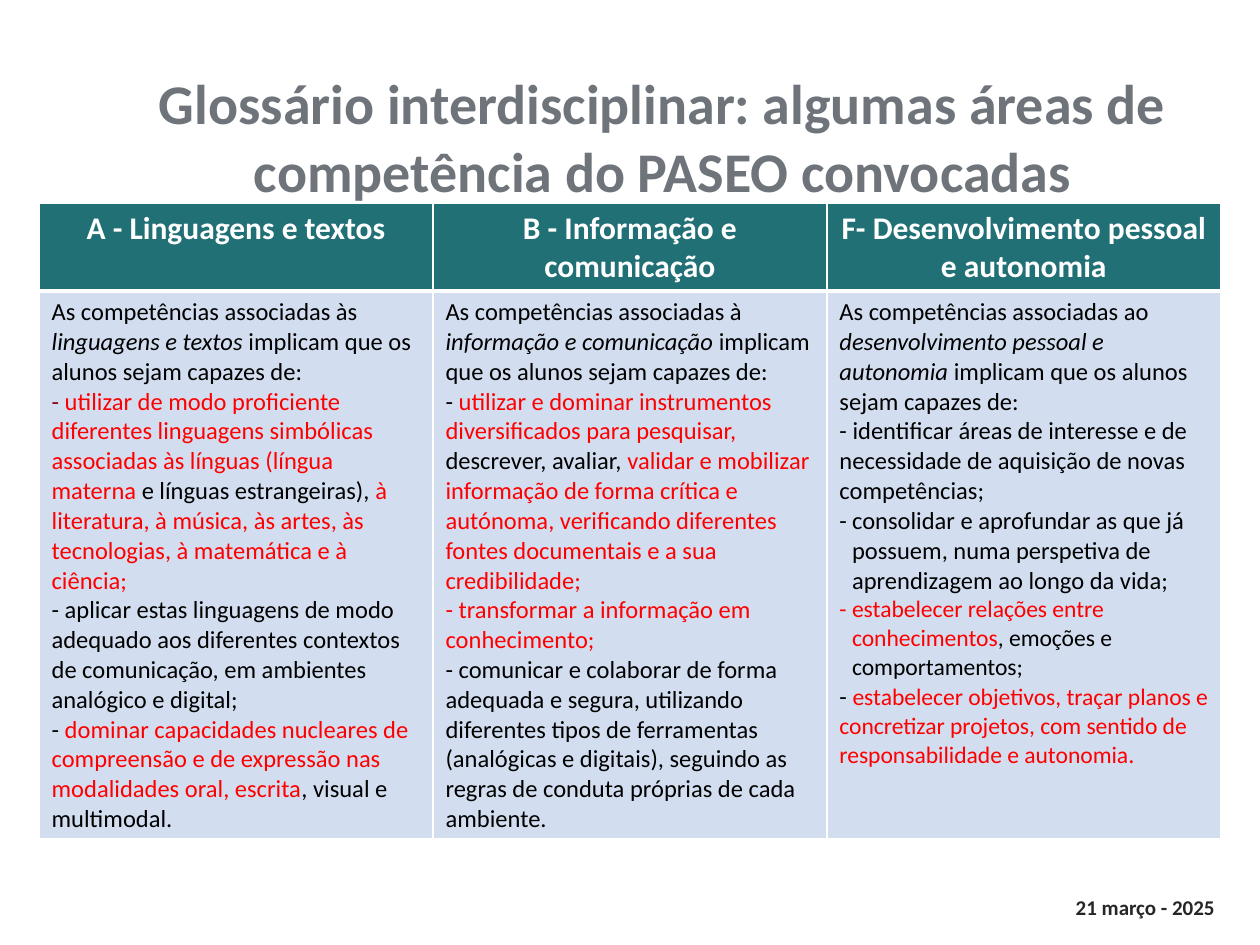
"""Build the slide with the interdisciplinary glossary of competence areas."""
from lxml import etree
from pptx import Presentation
from pptx import util as u
from pptx.dml.color import RGBColor
from pptx.enum import text
from pptx.oxml import ns

COLORS = {
    "title": "6E747A", "date": "262626", "header": "217076", "body": "D2DEEF",
    "white": "FFFFFF", "black": "000000", "red": "FF0000", "wine": "880016",
}
FONT = "Calibri"
BODY_SIZE = 14
SMALL_SIZE = 13.5
CENTER = text.PP_ALIGN.CENTER


def plain(words, size=BODY_SIZE):
    """Describe a black run."""
    return {"words": words, "color": "black", "size": size}


def red(words, size=BODY_SIZE):
    """Describe a highlighted run."""
    return {"words": words, "color": "red", "size": size}


def intro(article, area):
    """Describe the opening paragraph of an area."""
    return [plain(f"As competências associadas {article} "),
            {**plain(f"{area} "), "italic": True},
            plain("implicam que os alunos sejam capazes de:")]


AREAS = [
    ("A - Linguagens e textos", [
        intro("às", "linguagens e textos"),
        [{**plain("- "), "color": "wine"},
         red("utilizar de modo proficiente diferentes linguagens simbólicas "
             "associadas às línguas (língua materna "),
         plain("e línguas estrangeiras), "),
         red("à literatura, à música, às artes, às tecnologias, à matemática e à ciência;")],
        [plain("- aplicar estas linguagens de modo adequado aos diferentes contextos "
               "de comunicação, em ambientes analógico e digital;")],
        [plain("- "),
         red("dominar capacidades nucleares de compreensão e de expressão nas "
             "modalidades oral, escrita"),
         plain(", visual e multimodal.")],
    ]),
    ("B - Informação e comunicação", [
        intro("à", "informação e comunicação"),
        [plain("- "),
         red("utilizar e dominar instrumentos diversificados para pesquisar, "),
         plain("descrever, avaliar, "),
         red("validar e mobilizar informação de forma crítica e autónoma, verificando "
             "diferentes fontes documentais e a sua credibilidade;")],
        [red("- transformar a informação em conhecimento;")],
        [plain("- comunicar e colaborar de forma adequada e segura, utilizando diferentes "
               "tipos de ferramentas (analógicas e digitais), seguindo as regras de conduta "
               "próprias de cada ambiente.")],
    ]),
    ("F- Desenvolvimento pessoal e autonomia", [
        intro("ao", "desenvolvimento pessoal e autonomia"),
        [plain("- identificar áreas de interesse e de necessidade de aquisição de novas "
               "competências;")],
        ["-", plain("consolidar e aprofundar as que já possuem, numa perspetiva de "
                    "aprendizagem ao longo da vida;")],
        ["-", red("estabelecer relações entre conhecimentos", SMALL_SIZE),
         plain(", emoções e comportamentos;", SMALL_SIZE)],
        [plain("- "),
         red("estabelecer objetivos, traçar planos e concretizar projetos, com sentido de "
             "responsabilidade e autonomia", SMALL_SIZE),
         red(".")],
    ]),
]


def add_run(paragraph, words, color, size, bold=False, italic=False):
    """Add one formatted run to a paragraph."""
    run = paragraph.add_run()
    run.text = words
    font = run.font
    font.name, font.size, font.bold, font.italic = FONT, u.Pt(size), bold, italic
    font.color.rgb = RGBColor.from_string(COLORS[color])


def add_bullet(paragraph, character):
    """Give a paragraph a hanging bullet."""
    properties = paragraph._p.get_or_add_pPr()
    properties.set("marL", str(u.Inches(0.1)))
    properties.set("indent", str(-u.Inches(0.1)))
    etree.SubElement(properties, ns.qn("a:buFont"), typeface=FONT)
    etree.SubElement(properties, ns.qn("a:buChar"), char=character)


def add_label(slide, place, words, color, size, alignment):
    """Add a bold single-paragraph text box, centred vertically."""
    frame = slide.shapes.add_textbox(*map(u.Inches, place)).text_frame
    frame.word_wrap = True
    frame.vertical_anchor = text.MSO_ANCHOR.MIDDLE
    paragraph = frame.paragraphs[0]
    paragraph.alignment = alignment
    add_run(paragraph, words, color, size, bold=True)


def style_cell(cell, fill, bottom_width=1):
    """Fill a cell and draw its white borders."""
    cell.fill.solid()
    cell.fill.fore_color.rgb = RGBColor.from_string(COLORS[fill])
    properties = cell._tc.get_or_add_tcPr()
    for position, side in enumerate("LRTB"):
        width = bottom_width if side == "B" else 1
        line = etree.Element(ns.qn(f"a:ln{side}"), w=str(u.Pt(width)))
        solid = etree.SubElement(line, ns.qn("a:solidFill"))
        etree.SubElement(solid, ns.qn("a:srgbClr"), val=COLORS["white"])
        properties.insert(position, line)


def fill_header(cell, heading):
    """Write a centred column heading."""
    style_cell(cell, "header", bottom_width=3)
    paragraph = cell.text_frame.paragraphs[0]
    paragraph.alignment = CENTER
    add_run(paragraph, heading, "white", 18, bold=True)


def fill_body(cell, paragraphs):
    """Write the competences of one area."""
    style_cell(cell, "body")
    frame = cell.text_frame
    for index, runs in enumerate(paragraphs):
        paragraph = frame.add_paragraph() if index else frame.paragraphs[0]
        for run in runs:
            if isinstance(run, str):
                add_bullet(paragraph, run)
            else:
                add_run(paragraph, **run)


def add_area_table(slide):
    """Add the table with one column for each area."""
    place = map(u.Inches, (0.31, 1.61, 9.38, 5.05))
    table = slide.shapes.add_table(2, len(AREAS), *place).table
    table.horz_banding = False
    for row, height in zip(table.rows, (0.7, 4.35)):
        row.height = u.Inches(height)
    for column, (heading, paragraphs) in enumerate(AREAS):
        fill_header(table.cell(0, column), heading)
        fill_body(table.cell(1, column), paragraphs)


def main():
    """Build and save the slide."""
    presentation = Presentation()
    presentation.slide_width = u.Inches(10)
    presentation.slide_height = u.Inches(7.5)
    slide = presentation.slides.add_slide(presentation.slide_layouts[6])
    add_label(slide, (7.93, 7.05, 1.81, 0.3), "21 março - 2025", "date", 12,
              text.PP_ALIGN.RIGHT)
    add_label(slide, (0.52, 0.79, 9.48, 0.58),
              "Glossário interdisciplinar: algumas áreas de competência do PASEO convocadas",
              "title", 32, CENTER)
    add_area_table(slide)
    presentation.save("out.pptx")


if __name__ == "__main__":
    main()
